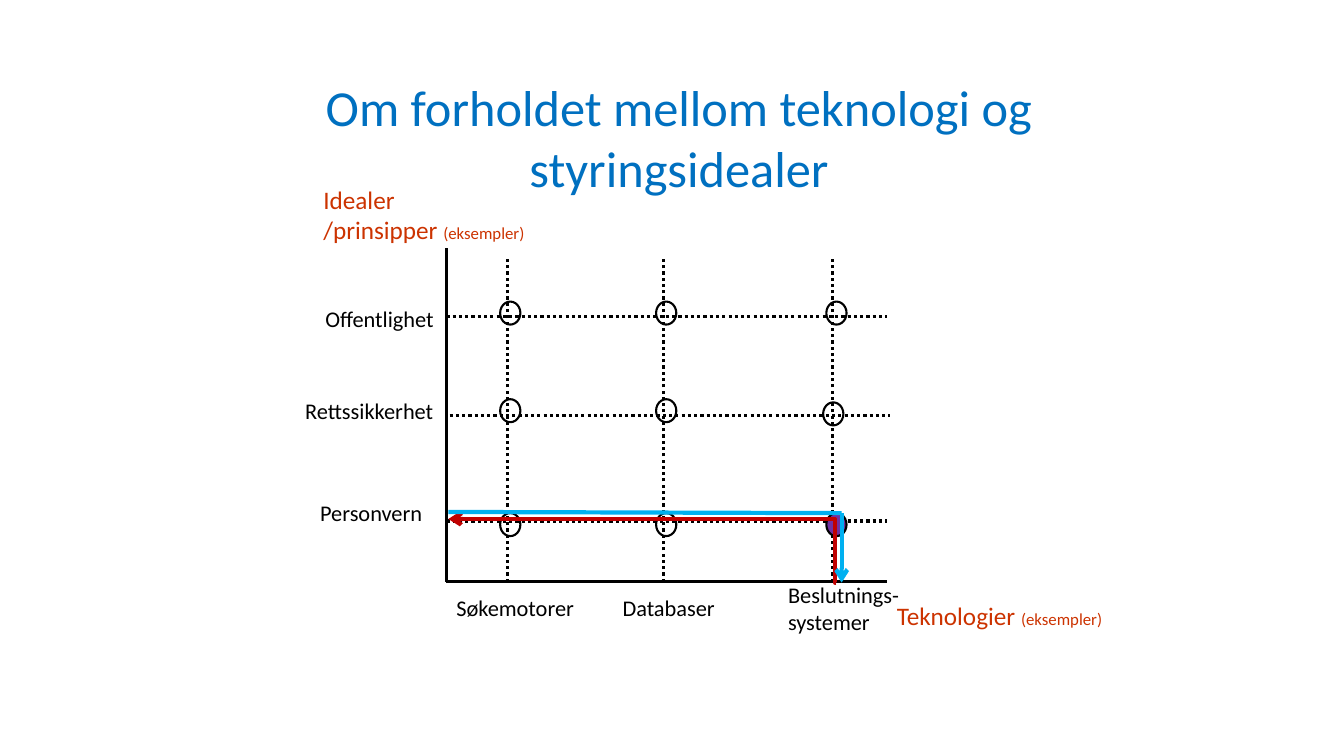
from lxml.etree import SubElement
from pptx import Presentation
from pptx.dml.color import RGBColor
from pptx.enum.dml import MSO_LINE
from pptx.enum.shapes import MSO_CONNECTOR, MSO_SHAPE
from pptx.enum.text import MSO_ANCHOR, MSO_AUTO_SIZE, PP_ALIGN
from pptx.oxml.ns import qn
from pptx.util import Cm, Pt

FONT = "Calibri"
COLORS = {
    "title": "0070C0",
    "black": "000000",
    "axis_name": "CC3300",
    "chosen": "7030A0",
    "red": "C00000",
    "blue": "00B0F0",
}

AXIS_X, AXIS_Y = 11.25, 14.66
AXIS_TOP, AXIS_RIGHT = 6.25, 22.35
GRID_TOP = 6.45
CIRCLE_W, CIRCLE_H = 0.51, 0.58

# Each technology: line x, circle centre x
TECHNOLOGIES = [(16.71, 16.79), (12.78, 12.86), (20.98, 21.08)]
# Each ideal: line y, circle centre y, shift of the line to the right
IDEALS = [(13.13, 13.22, 0), (10.46, 10.35, 0.08), (7.98, 7.89, 0)]
SHIFTED_CIRCLES = {(2, 1): (21.0, 10.43)}
CHOSEN_CIRCLE = (2, 0)

# Text, left, top, width, height, alignment
LABELS = [
    ("Personvern", 7.82, 12.45, 3.12, 0.94, PP_ALIGN.LEFT),
    ("Rettssikkerhet", 7.39, 9.88, 3.78, 0.94, PP_ALIGN.RIGHT),
    ("Offentlighet", 7.95, 7.57, 3.28, 0.94, PP_ALIGN.LEFT),
    ("Databaser", 15.44, 14.83, 2.87, 0.94, PP_ALIGN.LEFT),
    ("Søkemotorer", 11.25, 14.83, 3.53, 0.94, PP_ALIGN.LEFT),
    ("Beslutnings-\nsystemer", 19.61, 14.5, 3.4, 1.63, PP_ALIGN.LEFT),
]
AXIS_NAMES = [
    ("Idealer\n/prinsipper ", 7.9, 4.5, 5.64, 1.8),
    ("Teknologier ", 22.35, 15.01, 5.74, 1.02),
]


def rgb(color):
    return RGBColor.from_string(COLORS[color])


def format_run(run, size, color):
    run.font.name = FONT
    run.font.size = Pt(size)
    run.font.color.rgb = rgb(color)


def add_title(slide, text):
    title = slide.shapes.title
    title.left, title.top = Cm(4.06), Cm(1.8)
    title.width, title.height = Cm(26.11), Cm(2.74)
    frame = title.text_frame
    frame.text = text
    frame.word_wrap = True
    frame.auto_size = MSO_AUTO_SIZE.NONE
    frame.vertical_anchor = MSO_ANCHOR.TOP
    frame.paragraphs[0].alignment = PP_ALIGN.CENTER
    format_run(frame.paragraphs[0].runs[0], 36, "title")


def add_label(slide, text, left, top, width, height,
              align=PP_ALIGN.LEFT, size=16, color="black"):
    box = slide.shapes.add_textbox(Cm(left), Cm(top), Cm(width), Cm(height))
    frame = box.text_frame
    frame.text = text
    frame.word_wrap = False
    frame.auto_size = MSO_AUTO_SIZE.SHAPE_TO_FIT_TEXT
    frame.vertical_anchor = MSO_ANCHOR.MIDDLE
    for paragraph in frame.paragraphs:
        paragraph.alignment = align
        format_run(paragraph.runs[0], size, color)
    return frame


def add_axis_name(slide, text, *place):
    frame = add_label(slide, text, *place, size=18, color="axis_name")
    note = frame.paragraphs[-1].add_run()
    note.text = "(eksempler)"
    format_run(note, 12, "axis_name")


def add_line(slide, start, end, color="black", width=2.25, dotted=False,
             arrow=False, kind=MSO_CONNECTOR.STRAIGHT):
    line = slide.shapes.add_connector(
        kind, Cm(start[0]), Cm(start[1]), Cm(end[0]), Cm(end[1]))
    line.line.color.rgb = rgb(color)
    line.line.width = Pt(width)
    if dotted:
        line.line.dash_style = MSO_LINE.ROUND_DOT
    properties = line._element.spPr
    if arrow:
        SubElement(properties.find(qn("a:ln")), qn("a:tailEnd"), type="arrow")
    SubElement(properties, qn("a:effectLst"))
    return line


def add_circle(slide, center_x, center_y, chosen):
    circle = slide.shapes.add_shape(
        MSO_SHAPE.OVAL, Cm(center_x - CIRCLE_W / 2), Cm(center_y - CIRCLE_H / 2),
        Cm(CIRCLE_W), Cm(CIRCLE_H))
    circle.shadow.inherit = False
    if chosen:
        circle.fill.solid()
        circle.fill.fore_color.rgb = rgb("chosen")
    else:
        circle.fill.background()
    circle.line.color.rgb = rgb("black")
    circle.line.width = Pt(1.5)


def add_grid(slide):
    for line_y, _, shift in IDEALS:
        add_line(slide, (AXIS_X + shift, line_y), (AXIS_RIGHT + shift, line_y),
                 dotted=True)
    for column, (line_x, circle_x) in enumerate(TECHNOLOGIES):
        add_line(slide, (line_x, AXIS_Y), (line_x, GRID_TOP), dotted=True)
        for row, (_, circle_y, _) in enumerate(IDEALS):
            cell = (column, row)
            center = SHIFTED_CIRCLES.get(cell, (circle_x, circle_y))
            add_circle(slide, *center, chosen=cell == CHOSEN_CIRCLE)


def add_paths(slide):
    """Draw the red path to the ideal and the blue path to the technology."""
    red = add_line(slide, (21.08, 14.68), (11.3, 13.08), "red", 3,
                   arrow=True, kind=MSO_CONNECTOR.ELBOW)
    geometry = red._element.spPr.find(qn("a:prstGeom"))
    SubElement(geometry.find(qn("a:avLst")), qn("a:gd"),
               name="adj1", fmla="val 400")
    corner = (21.21, 12.93)
    add_line(slide, (11.3, 12.9), corner, "blue", 3)
    add_line(slide, corner, (21.21, 14.68), "blue", 3, arrow=True)


def main():
    presentation = Presentation()
    presentation.slide_width, presentation.slide_height = Cm(33.87), Cm(19.05)
    slide = presentation.slides.add_slide(presentation.slide_layouts[5])
    add_title(slide, "Om forholdet mellom teknologi og styringsidealer")
    add_grid(slide)
    add_line(slide, (AXIS_X, AXIS_Y), (AXIS_X, AXIS_TOP))
    add_line(slide, (AXIS_X, AXIS_Y), (AXIS_RIGHT, AXIS_Y))
    for label in LABELS:
        add_label(slide, *label)
    for axis_name in AXIS_NAMES:
        add_axis_name(slide, *axis_name)
    add_paths(slide)
    presentation.save("out.pptx")


if __name__ == "__main__":
    main()
